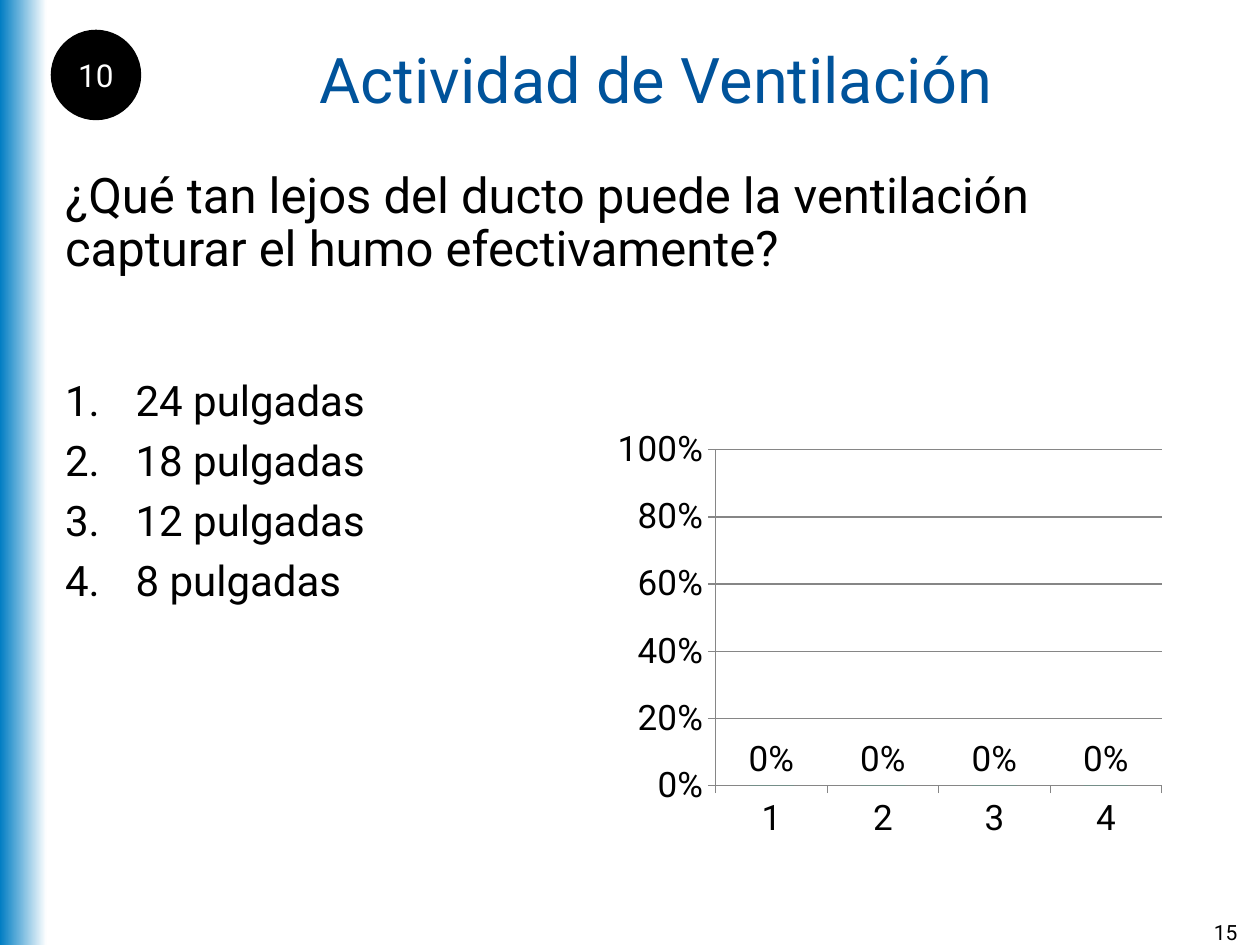
from dataclasses import dataclass

from lxml import etree
from pptx import Presentation
from pptx import util as u
from pptx.chart.data import CategoryChartData
from pptx.dml.color import RGBColor
from pptx.enum import chart as ch, shapes, text
from pptx.oxml.ns import qn

WIDE, HIGH = 10, 7.5
EDGE = WIDE / 24
FACE = "Roboto"


@dataclass
class Box:
    """A place on the slide, in inches."""
    x: float
    y: float
    w: float
    h: float

    def emu(self) -> list:
        return [u.Inches(v) for v in (self.x, self.y, self.w, self.h)]


@dataclass
class Style:
    size: float
    hue: str = "000000"
    align: text.PP_ALIGN = text.PP_ALIGN.LEFT


def tint(hue: str) -> RGBColor:
    return RGBColor.from_string(hue)


def place(shape, box: Box) -> None:
    shape.left, shape.top, shape.width, shape.height = box.emu()


def dress(font, style: Style) -> None:
    font.name, font.size = FACE, u.Pt(style.size)
    font.color.rgb = tint(style.hue)


def write(shape, lines: list, style: Style) -> list:
    frame = shape.text_frame
    frame.text = "\n".join(lines)
    frame.auto_size = text.MSO_AUTO_SIZE.NONE
    for para in frame.paragraphs:
        para.alignment = style.align
        dress(para.font, style)
    return list(frame.paragraphs)


def mark(para, indent: float, kind: str, **attrs) -> None:
    """Set a paragraph's hanging indent and its bullet."""
    props = para._p.get_or_add_pPr()
    props.set("marL", str(u.Inches(indent)))
    props.set("indent", str(-u.Inches(indent)))
    bullet = etree.Element(qn(kind), attrs)
    props.find(qn("a:defRPr")).addprevious(bullet)


def add_band(slide) -> None:
    band = slide.shapes.add_shape(shapes.MSO_SHAPE.RECTANGLE, *Box(0, 0, 0.37, HIGH).emu())
    band.shadow.inherit = False
    band.line.fill.background()
    band.fill.gradient()
    band.fill.gradient_angle = 0
    for stop, (hue, pos) in zip(band.fill.gradient_stops, (("007DC3", 0), ("FFFFFF", 1))):
        stop.color.rgb, stop.position = tint(hue), pos


def add_timer(slide) -> None:
    disc = slide.shapes.add_shape(shapes.MSO_SHAPE.OVAL, *Box(EDGE, 0.25, 0.69, 0.69).emu())
    disc.shadow.inherit = False
    disc.fill.solid()
    disc.fill.fore_color.rgb = disc.line.color.rgb = tint("000000")
    disc.line.width = u.Pt(2)
    frame = disc.text_frame
    frame.margin_left = frame.margin_right = frame.margin_top = frame.margin_bottom = 0
    frame.vertical_anchor = text.MSO_ANCHOR.MIDDLE
    write(disc, ["10"], Style(18, "FFFFFF", text.PP_ALIGN.CENTER))
    frame.word_wrap = False


def set_plot(chart, box: Box) -> None:
    """Fix the inner plot area, in shares of the chart's size."""
    area = chart._chartSpace.chart.plotArea
    for old in area.findall(qn("c:layout")):
        area.remove(old)
    layout = etree.Element(qn("c:layout"))
    manual = etree.SubElement(layout, qn("c:manualLayout"))
    pairs = (("layoutTarget", "inner"), ("xMode", "edge"), ("yMode", "edge"),
             ("x", box.x), ("y", box.y), ("w", box.w), ("h", box.h))
    for name, val in pairs:
        etree.SubElement(manual, qn(f"c:{name}"), val=str(val))
    area.insert(0, layout)


def add_votes(slide) -> None:
    data = CategoryChartData(number_format="0%")
    data.categories = ["1", "2", "3", "4"]
    data.add_series("Series 1", [0] * 4)
    chart = slide.shapes.add_chart(ch.XL_CHART_TYPE.COLUMN_CLUSTERED,
                                   *Box(4.83, 3.33, 4.48, 3.42).emu(), data).chart
    chart.has_legend = chart.has_title = False
    dress(chart.font, Style(20))
    set_plot(chart, Box(0.19, 0.07, 0.79, 0.78))

    scale = chart.value_axis
    scale.minimum_scale, scale.maximum_scale, scale.major_unit = 0, 1, 0.2
    scale.has_major_gridlines = True
    scale.tick_labels.number_format = "0%"
    scale.tick_labels.number_format_is_linked = False
    for axis in (scale, chart.category_axis):
        axis.major_tick_mark = ch.XL_TICK_MARK.OUTSIDE
    for part in (scale, chart.category_axis, scale.major_gridlines):
        part.format.line.color.rgb = tint("868686")
        part.format.line.width = u.Pt(0.75)

    plot = chart.plots[0]
    plot.gap_width, plot.vary_by_categories = 150, False
    fill = plot.series[0].format.fill
    fill.solid()
    fill.fore_color.rgb = tint("00CC99")
    plot.has_data_labels = True
    labels = plot.data_labels
    labels.show_value = True
    labels.number_format, labels.number_format_is_linked = "0%", False
    labels.position = ch.XL_LABEL_POSITION.OUTSIDE_END


def main() -> None:
    deck = Presentation()
    deck.slide_width, deck.slide_height = u.Inches(WIDE), u.Inches(HIGH)
    slide = deck.slides.add_slide(deck.slide_layouts[3])
    title, ask, picks = slide.placeholders
    add_band(slide)

    place(title, Box(EDGE, 0, WIDE - EDGE, HIGH / 6))
    title.text_frame.vertical_anchor = text.MSO_ANCHOR.MIDDLE
    write(title, ["Actividad de Ventilación"], Style(36, "00539B", text.PP_ALIGN.CENTER))

    place(ask, Box(EDGE, 1.31, 9.17, 0.75))
    query = "¿Qué tan lejos del ducto puede la ventilación capturar el humo efectivamente?"
    for para in write(ask, [query], Style(28)):
        para.line_spacing, para.space_before = 0.9, u.Pt(6.5)
        mark(para, 0, "a:buNone")

    place(picks, Box(EDGE, 2.92, 4.48, 3.67))
    for para in write(picks, [f"{n} pulgadas" for n in (24, 18, 12, 8)], Style(24)):
        para.space_before = u.Pt(5.6)
        mark(para, 0.56, "a:buAutoNum", type="arabicPeriod")

    add_timer(slide)
    add_votes(slide)
    page = slide.shapes.add_textbox(*Box(9.42, 7.25, 0.5, 0.25).emu())
    page.text_frame.word_wrap = True
    write(page, ["15"], Style(12, align=text.PP_ALIGN.RIGHT))
    deck.save("out.pptx")


if __name__ == "__main__":
    main()
